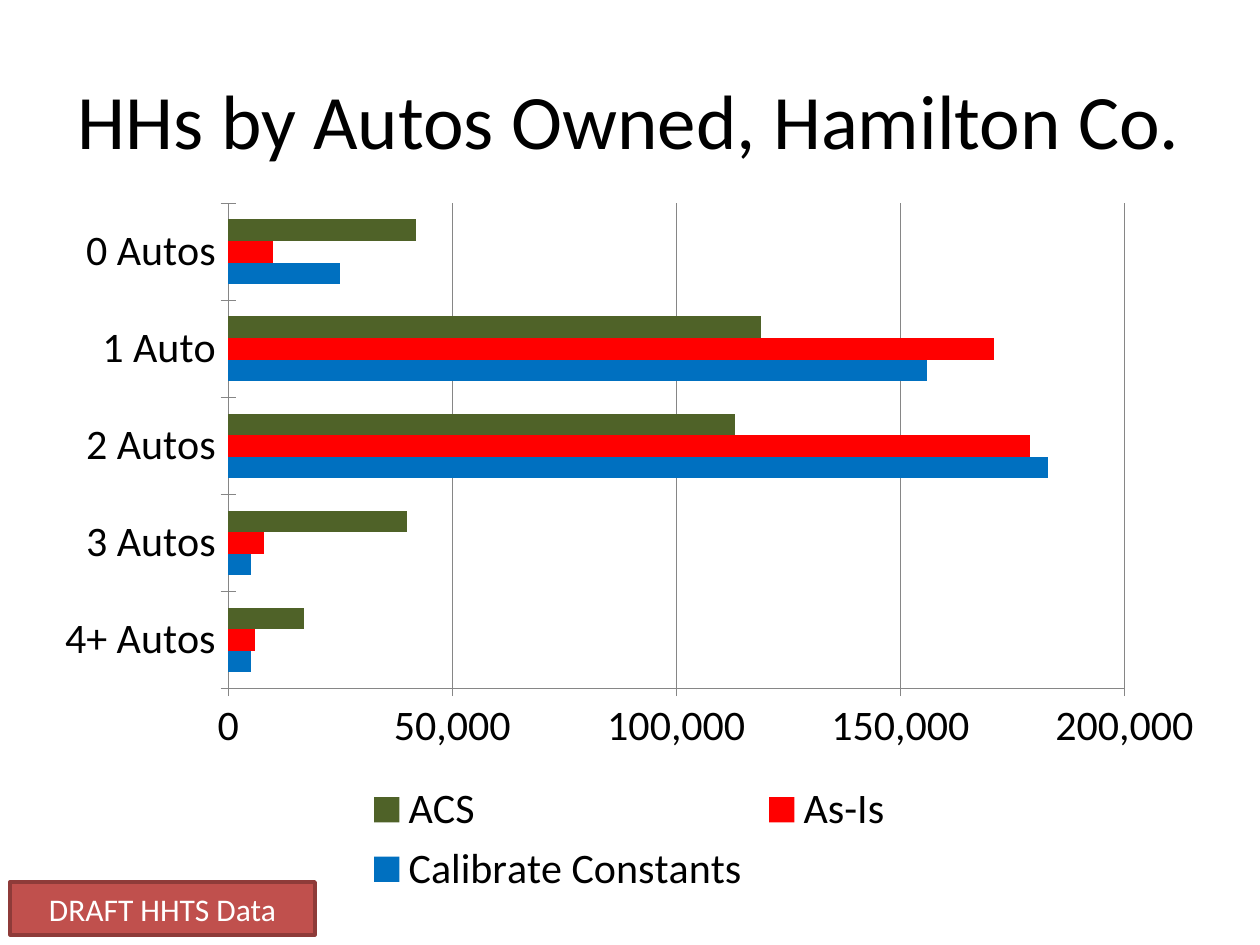
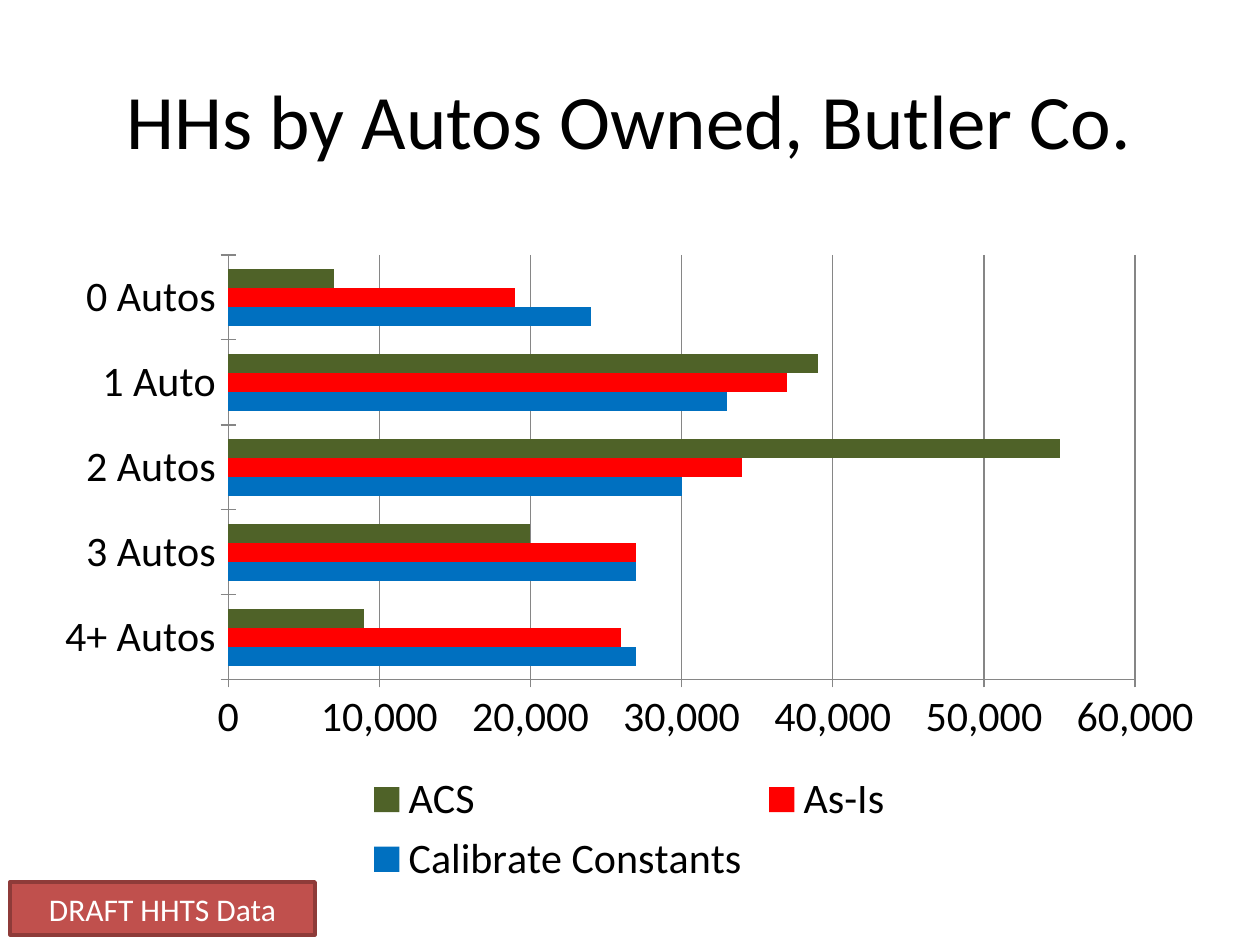
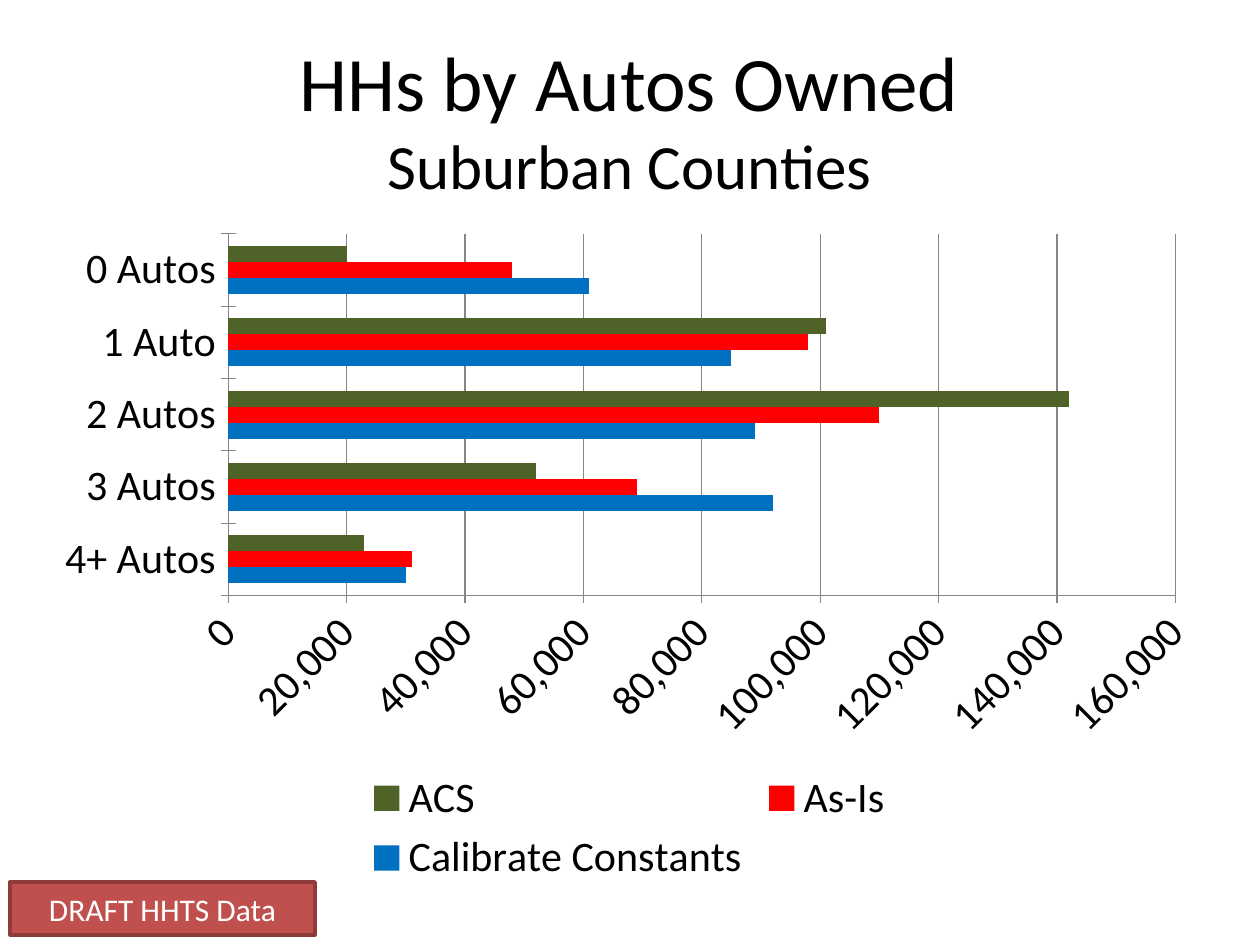
"""Build three slides comparing households by autos owned across counties."""
from dataclasses import dataclass

from lxml import etree
from pptx import Presentation
from pptx.chart.data import CategoryChartData
from pptx.dml.color import RGBColor
from pptx.enum.chart import XL_CHART_TYPE, XL_LEGEND_POSITION, XL_TICK_MARK
from pptx.enum.shapes import MSO_SHAPE
from pptx.enum.text import MSO_ANCHOR, PP_ALIGN
from pptx.oxml import parse_xml
from pptx.oxml.ns import nsdecls, qn
from pptx.util import Inches, Pt

BAR_CLUSTERED = XL_CHART_TYPE.BAR_CLUSTERED
LEGEND_BOTTOM = XL_LEGEND_POSITION.BOTTOM
TICK_CROSS = XL_TICK_MARK.CROSS
RECTANGLE = MSO_SHAPE.RECTANGLE
MIDDLE = MSO_ANCHOR.MIDDLE
CENTER = PP_ALIGN.CENTER


@dataclass(frozen=True)
class Theme:
    font: str = "Calibri"
    text: RGBColor = RGBColor(0x00, 0x00, 0x00)
    white: RGBColor = RGBColor(0xFF, 0xFF, 0xFF)
    grid: RGBColor = RGBColor(0x86, 0x86, 0x86)
    badge_fill: RGBColor = RGBColor(0xC0, 0x50, 0x4D)
    badge_line: RGBColor = RGBColor(0x8E, 0x3B, 0x39)
    calibrated: RGBColor = RGBColor(0x00, 0x70, 0xC0)
    as_is: RGBColor = RGBColor(0xFF, 0x00, 0x00)
    survey: RGBColor = RGBColor(0x4F, 0x62, 0x28)
    title_size: int = 44
    subtitle_size: int = 36
    axis_size: int = 24
    badge_size: int = 18
    chart_size: int = 10


theme = Theme()

CATEGORIES = ["4+ Autos", "3 Autos", "2 Autos", "1 Auto", "0 Autos"]
SERIES_COLORS = {
    "Calibrate Constants": theme.calibrated,
    "As-Is": theme.as_is,
    "ACS": theme.survey,
}
PLOT_FILL = (
    f'<c:spPr {nsdecls("c", "a")}><a:solidFill><a:srgbClr val="FFFFFF">'
    '<a:alpha val="75000"/></a:srgbClr></a:solidFill></c:spPr>'
)
COUNTIES = [
    {
        "title": [("HHs by Autos Owned, Hamilton Co.", theme.title_size)],
        "top": 1.5, "height": 5.67, "maximum": 200000, "step": 50000, "angle": 0,
        "households": [
            [5000, 5000, 183000, 156000, 25000],
            [6000, 8000, 179000, 171000, 10000],
            [17000, 40000, 113000, 119000, 42000],
        ],
    },
    {
        "title": [("HHs by Autos Owned, Butler Co.", theme.title_size)],
        "top": 1.92, "height": 5.17, "maximum": 60000, "step": 10000, "angle": 0,
        "households": [
            [27000, 27000, 30000, 33000, 24000],
            [26000, 27000, 34000, 37000, 19000],
            [9000, 20000, 55000, 39000, 7000],
        ],
    },
    {
        "title": [("HHs by Autos Owned", theme.title_size),
                  ("Suburban Counties", theme.subtitle_size)],
        "top": 1.75, "height": 5.33, "maximum": 160000, "step": 20000, "angle": -45,
        "households": [
            [30000, 92000, 89000, 85000, 61000],
            [31000, 69000, 110000, 98000, 48000],
            [23000, 52000, 142000, 101000, 20000],
        ],
    },
]


def style_font(font, size, color):
    font.name = theme.font
    font.size = Pt(size)
    font.color.rgb = color


def write_centered(shape, lines, color):
    text_frame = shape.text_frame
    text_frame.word_wrap = True
    text_frame.vertical_anchor = MIDDLE
    paragraph = text_frame.paragraphs[0]
    paragraph.alignment = CENTER
    for index, (text, size) in enumerate(lines):
        if index:
            paragraph.add_line_break()
        run = paragraph.add_run()
        run.text = text
        style_font(run.font, size, color)


presentation = Presentation()
presentation.slide_width = Inches(10)
presentation.slide_height = Inches(7.5)
blank_layout = presentation.slide_layouts[6]

for county in COUNTIES:
    slide = presentation.slides.add_slide(blank_layout)

    title = slide.shapes.add_textbox(Inches(0.33), Inches(0.33), Inches(9.33), Inches(1.22))
    write_centered(title, county["title"], theme.text)

    chart_data = CategoryChartData(number_format="#,##0")
    chart_data.categories = CATEGORIES
    for name, values in zip(SERIES_COLORS, county["households"]):
        chart_data.add_series(name, values)
    chart = slide.shapes.add_chart(
        BAR_CLUSTERED, Inches(0.33), Inches(county["top"]),
        Inches(9.33), Inches(county["height"]), chart_data,
    ).chart
    style_font(chart.font, theme.chart_size, theme.text)
    chart.has_title = False
    chart.has_legend = True
    chart.legend.position = LEGEND_BOTTOM
    chart.legend.include_in_layout = False
    style_font(chart.legend.font, theme.axis_size, theme.text)

    plot = chart.plots[0]
    plot.gap_width = 150
    plot.vary_by_categories = False
    for series, color in zip(plot.series, SERIES_COLORS.values()):
        series.format.fill.solid()
        series.format.fill.fore_color.rgb = color

    value_axis = chart.value_axis
    for axis in (chart.category_axis, value_axis):
        axis.major_tick_mark = TICK_CROSS
        axis.format.line.color.rgb = theme.grid
        style_font(axis.tick_labels.font, theme.axis_size, theme.text)
    value_axis.minimum_scale = 0
    value_axis.maximum_scale = county["maximum"]
    value_axis.major_unit = county["step"]
    value_axis.has_major_gridlines = True
    value_axis.major_gridlines.format.line.color.rgb = theme.grid
    value_axis.tick_labels.number_format = "#,##0"
    value_axis.tick_labels.number_format_is_linked = False
    label_body = value_axis._element.find(qn("c:txPr")).find(qn("a:bodyPr"))
    label_body.set("rot", str(county["angle"] * 60000))
    etree.ElementBase.append(chart._chartSpace.chart.plotArea, parse_xml(PLOT_FILL))

    badge = slide.shapes.add_shape(RECTANGLE, Inches(0.08), Inches(7), Inches(2.42), Inches(0.42))
    badge.shadow.inherit = False
    badge.fill.solid()
    badge.fill.fore_color.rgb = theme.badge_fill
    badge.line.color.rgb = theme.badge_line
    badge.line.width = Pt(2)
    write_centered(badge, [("DRAFT HHTS Data", theme.badge_size)], theme.white)

presentation.save("out.pptx")
